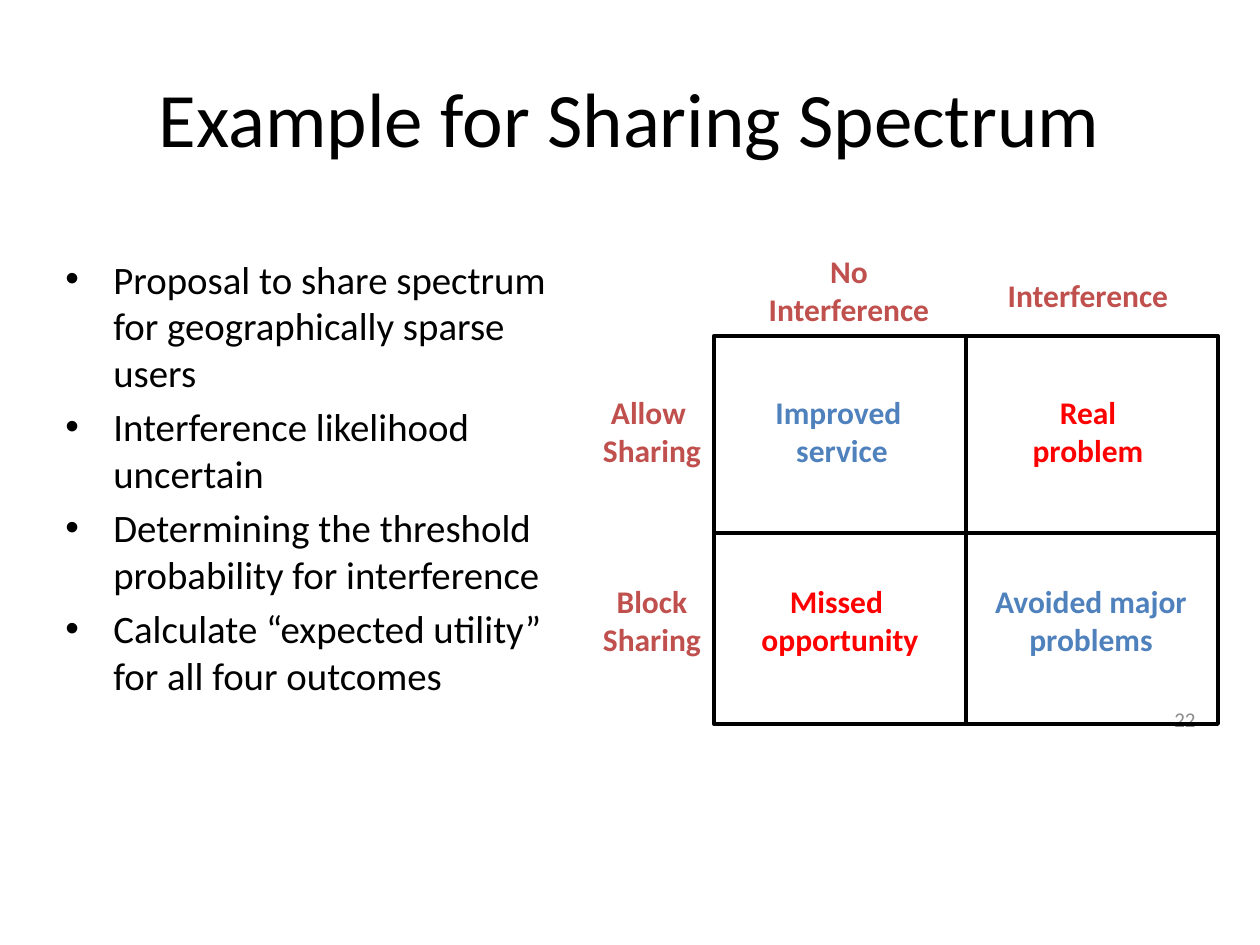
from lxml import etree
from pptx import Presentation
from pptx.dml.color import RGBColor
from pptx.enum.shapes import MSO_CONNECTOR, MSO_SHAPE
from pptx.enum.text import MSO_ANCHOR, PP_ALIGN
from pptx.oxml.ns import qn
from pptx.util import Pt

EMU_PER_PX = 914400 / 126
LEFT, CENTER, RIGHT = PP_ALIGN.LEFT, PP_ALIGN.CENTER, PP_ALIGN.RIGHT
TOP, MIDDLE = MSO_ANCHOR.TOP, MSO_ANCHOR.MIDDLE
RECTANGLE, STRAIGHT = MSO_SHAPE.RECTANGLE, MSO_CONNECTOR.STRAIGHT

BLACK, GRAY = "000000", "8C8C8C"
LABEL, GOOD, BAD = "C0504D", "4F81BD", "FF0000"


def px(length):
    return round(length * EMU_PER_PX)


def color(hex_string):
    return RGBColor.from_string(hex_string)


class SlideBuilder:
    font = "Calibri"
    line_width = Pt(2.25)
    bullet_indent = 48

    def __init__(self, slide):
        self.slide = slide

    def text(self, box, lines, size, hex_color=BLACK, align=LEFT,
             anchor=TOP, bold=False, wrap=True):
        shape = self.slide.shapes.add_textbox(*map(px, box))
        frame = shape.text_frame
        frame.word_wrap = wrap
        frame.vertical_anchor = anchor
        frame.text = "\n".join(lines)
        for paragraph in frame.paragraphs:
            paragraph.alignment = align
            paragraph.font.name = self.font
            paragraph.font.size = Pt(size)
            paragraph.font.bold = bold
            paragraph.font.color.rgb = color(hex_color)
        return frame

    def bullets(self, box, lines, size):
        for paragraph in self.text(box, lines, size).paragraphs:
            paragraph.space_before = Pt(size * 0.2)
            properties = paragraph._p.get_or_add_pPr()
            properties.set("marL", str(px(self.bullet_indent)))
            properties.set("indent", str(-px(self.bullet_indent)))
            font = etree.Element(qn("a:buFont"), typeface="Arial")
            bullet = etree.Element(qn("a:buChar"), char="•")
            default_run = properties.find(qn("a:defRPr"))
            default_run.addprevious(font)
            default_run.addprevious(bullet)

    def label(self, center, top, width, lines, hex_color):
        height = 12 + 39 * len(lines)
        self.text((center - width / 2, top, width, height), lines, 18,
                  hex_color, CENTER, bold=True, wrap=False)

    def frame(self, box):
        shape = self.slide.shapes.add_shape(RECTANGLE, *map(px, box))
        shape.shadow.inherit = False
        shape.fill.background()
        self.outline(shape)

    def line(self, *ends):
        connector = self.slide.shapes.add_connector(STRAIGHT, *map(px, ends))
        self.outline(connector)
        etree.SubElement(connector._element.spPr, qn("a:effectLst"))

    def outline(self, shape):
        shape.line.color.rgb = color(BLACK)
        shape.line.width = self.line_width


def main():
    presentation = Presentation()
    presentation.slide_width, presentation.slide_height = px(1260), px(945)
    builder = SlideBuilder(
        presentation.slides.add_slide(presentation.slide_layouts[6]))

    # Slide number, title and bullet list
    builder.text((914, 694, 294, 50), ["22"], 12, GRAY, RIGHT, MIDDLE)
    builder.text((63, 38, 1134, 157), ["Example for Sharing Spectrum"], 44,
                 align=CENTER, anchor=MIDDLE)
    builder.bullets((53, 249, 514, 582), [
        "Proposal to share spectrum for geographically sparse users",
        "Interference likelihood uncertain",
        "Determining the threshold probability for interference",
        "Calculate “expected utility” for all four outcomes",
    ], 22.2)

    # Two-by-two outcome grid
    left, top, width, height = 714, 336, 504, 388
    middle_x, middle_y = left + width / 2, 533
    builder.frame((left, top, width, height))
    builder.line(middle_x, top, middle_x, top + height)
    builder.line(left, middle_y, left + width, middle_y)

    # Column headings, row headings and outcomes
    upper, lower = 387, 576
    for label in [
        (849, 246, 186, ["No", "Interference"], LABEL),
        (1088, 270, 186, ["Interference"], LABEL),
        (652, upper, 125, ["Allow ", "Sharing"], LABEL),
        (652, lower, 125, ["Block", "Sharing"], LABEL),
        (842, upper, 160, ["Improved ", "service"], GOOD),
        (1088, upper, 137, ["Real", "problem"], BAD),
        (840, lower, 184, ["Missed ", "opportunity"], BAD),
        (1091, lower, 218, ["Avoided major", "problems"], GOOD),
    ]:
        builder.label(*label)

    presentation.save("out.pptx")


if __name__ == "__main__":
    main()
